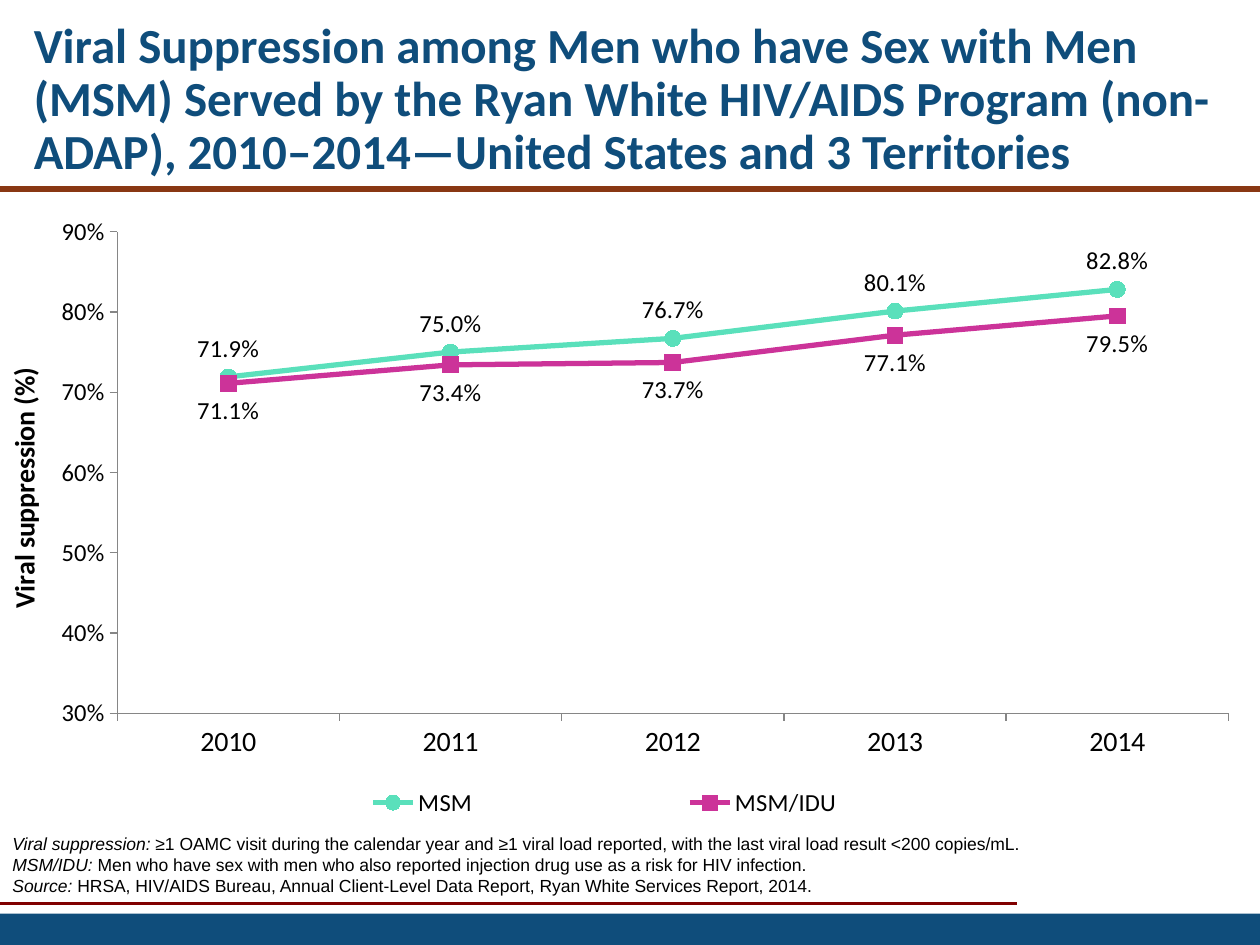
from lxml import etree
from pptx import Presentation
from pptx.chart.data import CategoryChartData
from pptx.dml.color import RGBColor
from pptx.enum.chart import (XL_CHART_TYPE, XL_LABEL_POSITION, XL_LEGEND_POSITION,
                             XL_MARKER_STYLE, XL_TICK_MARK)
from pptx.enum.shapes import MSO_CONNECTOR, MSO_SHAPE
from pptx.enum.text import MSO_ANCHOR
from pptx.oxml.ns import qn
from pptx.util import Inches, Pt

LINE_MARKERS = XL_CHART_TYPE.LINE_MARKERS
ABOVE, BELOW = XL_LABEL_POSITION.ABOVE, XL_LABEL_POSITION.BELOW
LEGEND_TOP = XL_LEGEND_POSITION.TOP
CIRCLE, SQUARE = XL_MARKER_STYLE.CIRCLE, XL_MARKER_STYLE.SQUARE
TICK_OUTSIDE = XL_TICK_MARK.OUTSIDE
STRAIGHT, RECTANGLE = MSO_CONNECTOR.STRAIGHT, MSO_SHAPE.RECTANGLE
TOP, MIDDLE = MSO_ANCHOR.TOP, MSO_ANCHOR.MIDDLE

NAVY, RUST, MAROON, BLACK, GRAY = "0F4D7B", "893713", "800000", "000000", "868686"
YEARS = ["2010", "2011", "2012", "2013", "2014"]
SERIES = [
    ("MSM", [0.719, 0.75, 0.767, 0.801, 0.828], "5AE0BB", CIRCLE, ABOVE),
    ("MSM/IDU", [0.711, 0.734, 0.737, 0.771, 0.795], "CC3399", SQUARE, BELOW),
]
TITLE = ("Viral Suppression among Men who have Sex with Men (MSM) Served by the Ryan White "
         "HIV/AIDS Program (non-ADAP), 2010‒2014—United States and 3 Territories")
NOTES = [
    ("Viral suppression:", " ≥1 OAMC visit during the calendar year and ≥1 viral load reported, "
     "with the last viral load result <200 copies/mL."),
    ("MSM/IDU:", " Men who have sex with men who also reported injection drug use as a risk "
     "for HIV infection."),
    ("Source:", " HRSA, HIV/AIDS Bureau, Annual Client-Level Data Report, Ryan White Services "
     "Report, 2014."),
]


def rgb(value):
    return RGBColor.from_string(value)


def set_font(font, size, color=BLACK, name="Calibri", bold=False, italic=False):
    font.size, font.name, font.bold, font.italic = Pt(size), name, bold, italic
    font.color.rgb = rgb(color)


def add_run(p, text, **style):
    r = p.add_run()
    r.text = text
    set_font(r.font, **style)


def manual_layout(x, y, w, h, inner=False):
    layout = etree.Element(qn("c:layout"))
    manual = etree.SubElement(layout, qn("c:manualLayout"))
    settings = [("layoutTarget", "inner")] if inner else []
    settings += [("xMode", "edge"), ("yMode", "edge"), ("x", x), ("y", y), ("w", w), ("h", h)]
    for tag, value in settings:
        etree.SubElement(manual, qn(f"c:{tag}")).set("val", str(value))
    return layout


class SlideBuilder:
    """Draws styled elements on the current slide."""

    def __init__(self, slide):
        self.s = slide

    def line(self, x1, x2, y, color, width):
        cx = self.s.shapes.add_connector(STRAIGHT, Inches(x1), Inches(y), Inches(x2), Inches(y))
        cx.line.color.rgb = rgb(color)
        cx.line.width = Pt(width)
        etree.SubElement(cx.element.spPr, qn("a:effectLst"))

    def bar(self, x, y, w, h, color):
        sp = self.s.shapes.add_shape(RECTANGLE, Inches(x), Inches(y), Inches(w), Inches(h))
        sp.shadow.inherit = False
        sp.fill.solid()
        sp.fill.fore_color.rgb = rgb(color)
        sp.line.fill.background()

    def text(self, x, y, w, h, paragraphs, anchor=TOP, spacing=None):
        tf = self.s.shapes.add_textbox(Inches(x), Inches(y), Inches(w), Inches(h)).text_frame
        tf.word_wrap = True
        tf.vertical_anchor = anchor
        for i, runs in enumerate(paragraphs):
            p = tf.add_paragraph() if i else tf.paragraphs[0]
            p.line_spacing = spacing
            for text, style in runs:
                add_run(p, text, **style)

    def line_chart(self, x, y, w, h):
        data = CategoryChartData(number_format="0.0%")
        data.categories = YEARS
        for name, values, *_ in SERIES:
            data.add_series(name, values)
        chart = self.s.shapes.add_chart(
            LINE_MARKERS, Inches(x), Inches(y), Inches(w), Inches(h), data).chart
        set_font(chart.font, 18)
        chart.has_title = False
        self.axes(chart)
        chart.plots[0].vary_by_categories = False
        for series, (_, _, color, marker, position) in zip(chart.plots[0].series, SERIES):
            self.series(series, color, marker, position)
        self.layout(chart)

    def axes(self, chart):
        value, category = chart.value_axis, chart.category_axis
        for axis, size in ((value, 14), (category, 16)):
            axis.has_major_gridlines = False
            axis.major_tick_mark = TICK_OUTSIDE
            axis.format.line.color.rgb = rgb(GRAY)
            axis.format.line.width = Pt(0.75)
            set_font(axis.tick_labels.font, size)
        value.minimum_scale, value.maximum_scale, value.major_unit = 0.3, 0.9, 0.1
        value.tick_labels.number_format = "0%"
        value.tick_labels.number_format_is_linked = False
        p = value.axis_title.text_frame.paragraphs[0]
        add_run(p, "Viral suppression (%)", size=16, bold=True)

    def series(self, series, color, marker, position):
        series.smooth = False
        series.format.line.color.rgb = rgb(color)
        series.format.line.width = Pt(3)
        series.marker.style, series.marker.size = marker, 9
        series.marker.format.fill.solid()
        series.marker.format.fill.fore_color.rgb = rgb(color)
        series.marker.format.line.color.rgb = rgb(color)
        labels = series.data_labels
        labels.show_value = True
        labels.position = position
        labels.number_format, labels.number_format_is_linked = "0.0%", False
        set_font(labels.font, 14)

    def layout(self, chart):
        chart.has_legend = True
        chart.legend.position = LEGEND_TOP
        chart.legend.include_in_layout = False
        set_font(chart.legend.font, 14)
        for old in chart.element.xpath("c:chart/c:plotArea/c:layout | c:chart/c:legend/c:layout"):
            old.getparent().remove(old)
        plot_area = chart.element.xpath("c:chart/c:plotArea")[0]
        plot_area.insert(0, manual_layout(0.093, 0.065, 0.882, 0.734, inner=True))
        legend_pos = chart.element.xpath("c:chart/c:legend/c:legendPos")[0]
        legend_pos.addnext(manual_layout(0.13, 0.9, 0.7, 0.07))


def main():
    prs = Presentation()
    prs.slide_width, prs.slide_height = Inches(10), Inches(7.5)
    slide = SlideBuilder(prs.slides.add_slide(prs.slide_layouts[6]))
    slide.line(-0.01, 8.07, 7.17, MAROON, 1.5)
    slide.bar(0, 7.25, 10, 0.25, NAVY)
    slide.line_chart(0, 1.5, 10, 5.21)
    title_style = dict(size=28, color=NAVY, bold=True)
    slide.text(0.17, 0.17, 9.83, 1.25, [[(TITLE, title_style)]], MIDDLE, 0.9)
    note = dict(size=10, name="Arial")
    slide.text(0, 6.56, 8.42, 0.61,
               [[(term, dict(note, italic=True)), (body, note)] for term, body in NOTES])
    slide.line(0, 10, 1.5, RUST, 3)
    prs.save("out.pptx")


if __name__ == "__main__":
    main()
